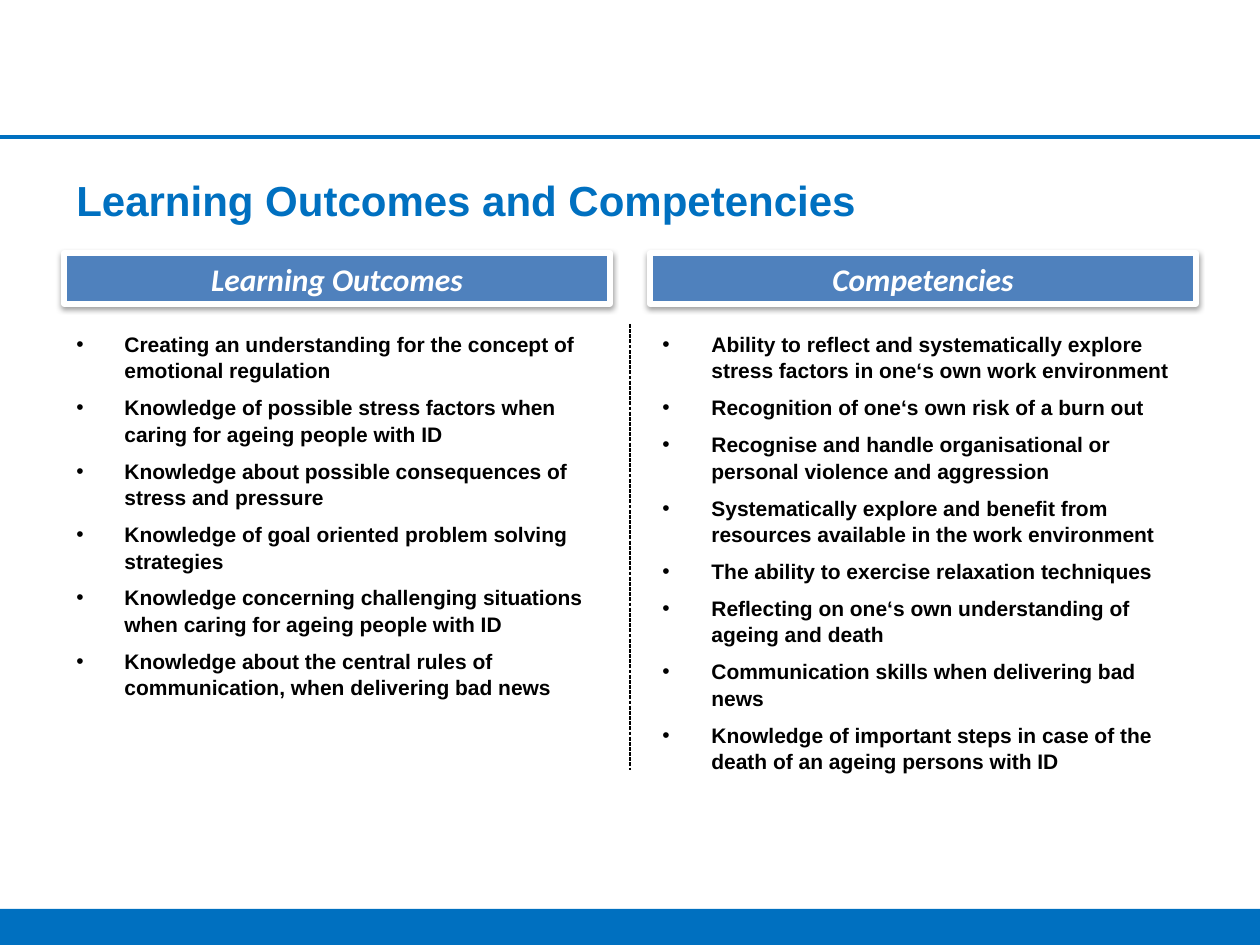
"""Build the slide on learning outcomes and competencies."""
from lxml import etree
from pptx import Presentation
from pptx.dml.color import RGBColor
from pptx.enum.dml import MSO_LINE
from pptx.enum.shapes import MSO_CONNECTOR, MSO_SHAPE
from pptx.enum.text import MSO_ANCHOR, PP_ALIGN
from pptx.oxml.ns import qn
from pptx.util import Emu, Pt

RECTANGLE = MSO_SHAPE.RECTANGLE
STRAIGHT = MSO_CONNECTOR.STRAIGHT
DASH = MSO_LINE.SQUARE_DOT
MIDDLE = MSO_ANCHOR.MIDDLE
CENTER = PP_ALIGN.CENTER
SCALE = 914400 / 126
BLUE = "0070C0"
COLUMN_WIDTH = 546
COLUMN_TOP, COLUMN_HEIGHT = 324, 446

COLUMNS = [
    (64, 48, "Learning Outcomes", [
        "Creating an understanding for the concept of emotional regulation",
        "Knowledge of possible stress factors when caring for ageing people with ID",
        "Knowledge about possible consequences of stress and pressure",
        "Knowledge of goal oriented problem solving strategies",
        "Knowledge concerning challenging situations when caring for ageing people with ID",
        "Knowledge about the central rules of communication, when delivering bad news",
    ]),
    (650, 49, "Competencies", [
        "Ability to reflect and systematically explore stress factors in one‘s own work environment",
        "Recognition of one‘s own risk of a burn out",
        "Recognise and handle organisational or personal violence and aggression",
        "Systematically explore and benefit from resources available in the work environment",
        "The ability to exercise relaxation techniques",
        "Reflecting on one‘s own understanding of ageing and death",
        "Communication skills when delivering bad news",
        "Knowledge of important steps in case of the death of an ageing persons with ID",
    ]),
]


def px(*lengths):
    return [Emu(round(length * SCALE)) for length in lengths]


def color(value):
    return RGBColor.from_string(value)


deck = Presentation()
deck.slide_width, deck.slide_height = px(1260, 945)
page = deck.slides.add_slide(deck.slide_layouts[6])

footer = page.shapes.add_shape(RECTANGLE, *px(0, 909, 1260, 36))
footer.shadow.inherit = False
footer.fill.solid()
footer.fill.fore_color.rgb = color(BLUE)
footer.line.fill.background()

rules = [
    ((0, 137, 1260, 137), BLUE, 2.25, None),
    ((630, COLUMN_TOP, 630, COLUMN_TOP + COLUMN_HEIGHT), "000000", 0.75, DASH),
]
for ends, ink, weight, dash in rules:
    rule = page.shapes.add_connector(STRAIGHT, *px(*ends))
    rule.line.color.rgb = color(ink)
    rule.line.width = Pt(weight)
    rule.line.dash_style = dash
    etree.SubElement(rule._element.spPr, qn("a:effectLst"))

title = page.shapes.add_textbox(*px(64, 155, 1132, 90)).text_frame
title.word_wrap = True
title.vertical_anchor = MIDDLE
para = title.paragraphs[0]
para.text = "Learning Outcomes and Competencies"
para.font.name, para.font.size, para.font.bold = "Arial", Pt(24), True
para.font.color.rgb = color(BLUE)

for left, indent, heading, items in COLUMNS:
    header = page.shapes.add_shape(RECTANGLE, *px(left, 253, COLUMN_WIDTH, 51))
    header.shadow.inherit = False
    header.fill.solid()
    header.fill.fore_color.rgb = color("4F81BD")
    header.line.color.rgb = color("FFFFFF")
    header.line.width = Pt(3)
    effects = header._element.spPr.find(qn("a:effectLst"))
    shadow = etree.SubElement(effects, qn("a:outerShdw"), blurRad="40000",
                              dist="20000", dir="5400000", rotWithShape="0")
    tint = etree.SubElement(shadow, qn("a:srgbClr"), val="000000")
    etree.SubElement(tint, qn("a:alpha"), val="38000")
    header.text_frame.vertical_anchor = MIDDLE
    para = header.text_frame.paragraphs[0]
    para.text = heading
    para.alignment = CENTER
    para.font.name, para.font.size = "Calibri", Pt(18)
    para.font.bold = para.font.italic = True
    para.font.color.rgb = color("FFFFFF")

    box = page.shapes.add_textbox(*px(left, COLUMN_TOP, COLUMN_WIDTH, COLUMN_HEIGHT))
    frame = box.text_frame
    frame.word_wrap = True
    margin = px(indent)[0]
    for index, item in enumerate(items):
        para = frame.add_paragraph() if index else frame.paragraphs[0]
        para.text = item
        para.line_spacing = 1.05
        para.space_after = Pt(6)
        properties = para._p.get_or_add_pPr()
        properties.set("marL", str(margin))
        properties.set("indent", str(-margin))
        etree.SubElement(properties, qn("a:buFont"), typeface="Arial")
        etree.SubElement(properties, qn("a:buChar"), char="•")
        para.font.name, para.font.size, para.font.bold = "Arial", Pt(12), True
        para.font.color.rgb = color("000000")

deck.save("out.pptx")
